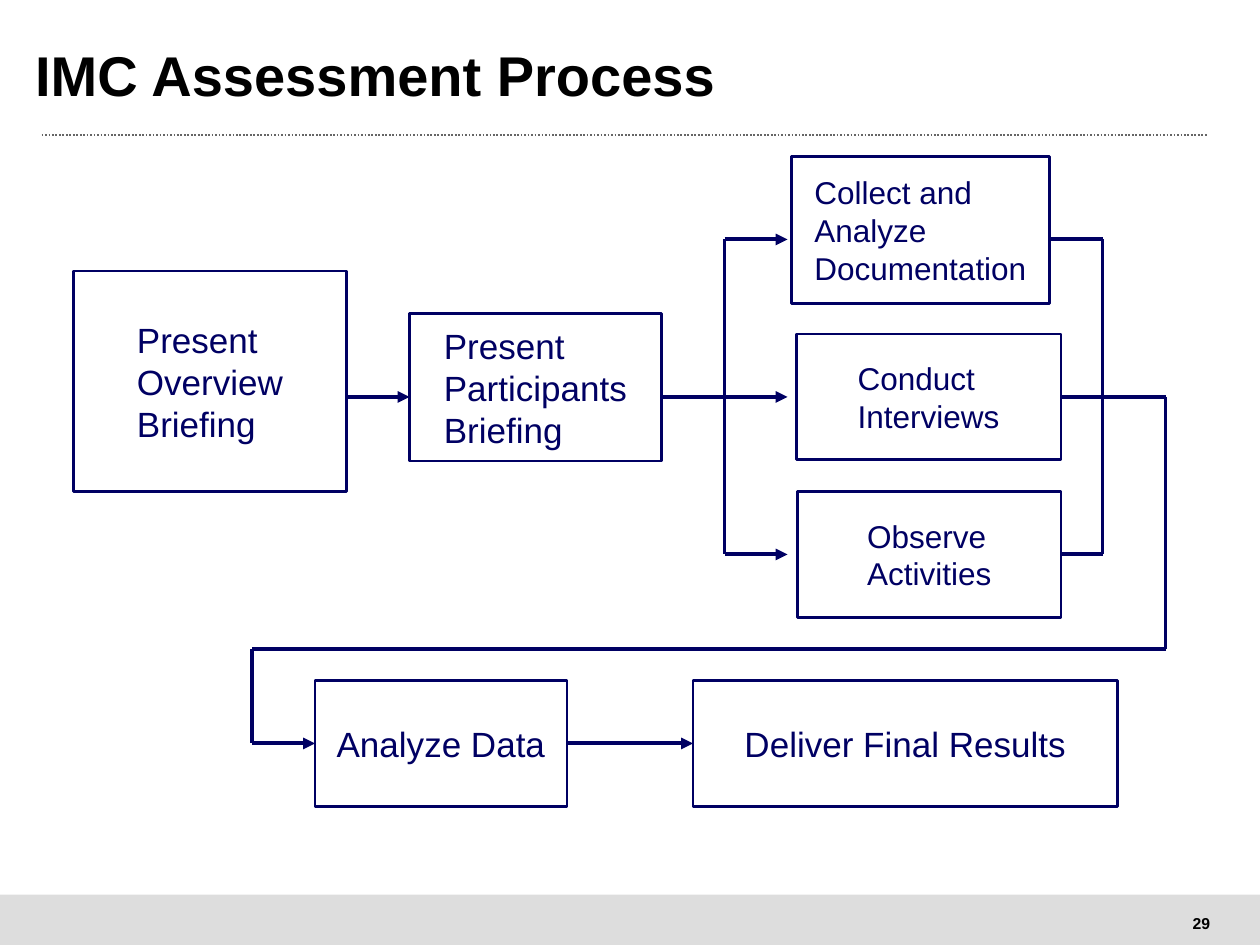
from dataclasses import dataclass
from typing import Optional

from lxml.etree import SubElement
from pptx import Presentation
from pptx.dml.color import RGBColor
from pptx.enum.dml import MSO_LINE
from pptx.enum.shapes import MSO_CONNECTOR, MSO_SHAPE
from pptx.enum.text import MSO_ANCHOR, PP_ALIGN
from pptx.oxml.ns import qn
from pptx.util import Pt


@dataclass(frozen=True)
class Theme:
    font: str = "Arial"
    navy: RGBColor = RGBColor(0x00, 0x00, 0x63)
    black: RGBColor = RGBColor(0x00, 0x00, 0x00)
    white: RGBColor = RGBColor(0xFF, 0xFF, 0xFF)
    rule: RGBColor = RGBColor(0x66, 0x66, 0x66)
    footer: RGBColor = RGBColor(0xDD, 0xDD, 0xDD)
    title_size: float = 32
    step_size: float = 20
    task_size: float = 18
    number_size: float = 9
    box_line: float = 1.5
    flow_line: float = 2.25


@dataclass(frozen=True)
class Step:
    text: str
    left: float
    top: float
    width: float
    height: float
    size: float


@dataclass(frozen=True)
class Flow:
    start: tuple[float, float]
    end: tuple[float, float]
    arrow: bool = False
    source: Optional[Step] = None  # joined at its right side
    target: Optional[Step] = None  # joined at its left side


THEME = Theme()
LEFT, RIGHT = 1, 3

# Heights of the flow rows and positions of the vertical flow lines
COLLECT_Y, MAIN_Y, OBSERVE_Y = 136.8, 226.8, 316.8
RETURN_Y, RESULT_Y = 370.8, 424.8
SPLIT_X, TASK_X, MERGE_X, RETURN_X, RESULT_X = 414, 450, 630, 666, 144

OVERVIEW = Step("Present\nOverview Briefing", 42, 154.8, 156, 126, THEME.step_size)
PARTICIPANTS = Step("Present Participants Briefing", 234, 179.28, 144, 84.24, THEME.step_size)
COLLECT = Step("Collect and Analyze Documentation", 452.16, 89.28, 147.6, 84.24, THEME.task_size)
CONDUCT = Step("Conduct Interviews", 455.04, 190.8, 151.2, 72, THEME.task_size)
OBSERVE = Step("Observe Activities", 455.76, 280.8, 150.48, 72, THEME.task_size)
ANALYZE = Step("Analyze Data", 180, 388.8, 144, 72, THEME.step_size)
DELIVER = Step("Deliver Final Results", 396, 388.8, 242.64, 72, THEME.step_size)
STEPS = [OVERVIEW, PARTICIPANTS, COLLECT, CONDUCT, OBSERVE, ANALYZE, DELIVER]

FLOWS = [
    # Briefings, then the split into three tasks
    Flow((198, MAIN_Y), (234, MAIN_Y), arrow=True),
    Flow((378, MAIN_Y), (TASK_X, MAIN_Y), arrow=True),
    Flow((SPLIT_X, COLLECT_Y), (SPLIT_X, OBSERVE_Y)),
    Flow((SPLIT_X, COLLECT_Y), (TASK_X, COLLECT_Y), arrow=True),
    Flow((SPLIT_X, OBSERVE_Y), (TASK_X, OBSERVE_Y), arrow=True),
    # Tasks merge and lead back to the results row
    Flow((600, COLLECT_Y), (MERGE_X, COLLECT_Y)),
    Flow((606.24, OBSERVE_Y), (MERGE_X, OBSERVE_Y), source=OBSERVE),
    Flow((MERGE_X, OBSERVE_Y), (MERGE_X, COLLECT_Y)),
    Flow((606.24, MAIN_Y), (RETURN_X, MAIN_Y), source=CONDUCT),
    Flow((RETURN_X, MAIN_Y), (RETURN_X, RETURN_Y)),
    Flow((RETURN_X, RETURN_Y), (RESULT_X, RETURN_Y)),
    Flow((RESULT_X, RETURN_Y), (RESULT_X, RESULT_Y)),
    # Results
    Flow((RESULT_X, RESULT_Y), (180, RESULT_Y), arrow=True, target=ANALYZE),
    Flow((324, RESULT_Y), (396, RESULT_Y), arrow=True, source=ANALYZE, target=DELIVER),
]


def write_text(frame, text: str, *, size: float, color: RGBColor, bold: bool = False,
               align=PP_ALIGN.LEFT, margin: float = 0, wrap: bool = True,
               spacing: float = 1.0) -> None:
    frame.word_wrap = wrap
    frame.vertical_anchor = MSO_ANCHOR.MIDDLE
    frame.margin_left = frame.margin_right = Pt(margin)
    frame.margin_top = frame.margin_bottom = Pt(margin)
    frame.text = text
    for paragraph in frame.paragraphs:
        paragraph.alignment = align
        paragraph.line_spacing = spacing
        paragraph.font.name = THEME.font
        paragraph.font.size = Pt(size)
        paragraph.font.bold = bold
        paragraph.font.color.rgb = color


def add_box(slide, left: float, top: float, width: float, height: float, fill: RGBColor):
    box = slide.shapes.add_shape(MSO_SHAPE.RECTANGLE, Pt(left), Pt(top), Pt(width), Pt(height))
    box.shadow.inherit = False
    box.fill.solid()
    box.fill.fore_color.rgb = fill
    box.line.fill.background()
    return box


def add_step(slide, step: Step):
    box = add_box(slide, step.left, step.top, step.width, step.height, THEME.white)
    box.line.color.rgb = THEME.navy
    box.line.width = Pt(THEME.box_line)
    write_text(box.text_frame, step.text, size=step.size, color=THEME.navy, margin=7.2)
    # Left-aligned lines, centred in the box as one block
    box.text_frame._txBody.bodyPr.set("anchorCtr", "1")
    return box


def add_line(slide, start: tuple[float, float], end: tuple[float, float],
             color: RGBColor, width: float):
    line = slide.shapes.add_connector(
        MSO_CONNECTOR.STRAIGHT, *(Pt(value) for value in (*start, *end)))
    line.line.color.rgb = color
    line.line.width = Pt(width)
    SubElement(line._element.spPr, qn("a:effectLst"))
    return line


def add_flow(slide, flow: Flow, boxes: dict) -> None:
    line = add_line(slide, flow.start, flow.end, THEME.navy, THEME.flow_line)
    if flow.arrow:
        SubElement(line.line._get_or_add_ln(), qn("a:tailEnd"), type="triangle")
    if flow.source:
        line.begin_connect(boxes[flow.source], RIGHT)
    if flow.target:
        line.end_connect(boxes[flow.target], LEFT)


def main() -> None:
    deck = Presentation()
    deck.slide_width, deck.slide_height = Pt(720), Pt(540)
    slide = deck.slides.add_slide(deck.slide_layouts[6])

    # Footer band and page number
    add_box(slide, 0, 511.2, 720, 28.8, THEME.footer)
    page_number = slide.shapes.add_textbox(Pt(673.92), Pt(518.4), Pt(25.2), Pt(18))
    write_text(page_number.text_frame, "29", size=THEME.number_size, color=THEME.black,
               bold=True, align=PP_ALIGN.CENTER, wrap=False)

    # Title and dotted rule
    title = slide.shapes.add_textbox(Pt(20.16), Pt(18), Pt(667.44), Pt(56.16))
    write_text(title.text_frame, "IMC Assessment Process", size=THEME.title_size,
               color=THEME.black, bold=True, spacing=0.8)
    rule = add_line(slide, (23.76, 77.04), (689.76, 77.04), THEME.rule, 1)
    rule.line.dash_style = MSO_LINE.ROUND_DOT

    # Process diagram
    boxes = {step: add_step(slide, step) for step in STEPS}
    for flow in FLOWS:
        add_flow(slide, flow, boxes)

    deck.save("out.pptx")


if __name__ == "__main__":
    main()
